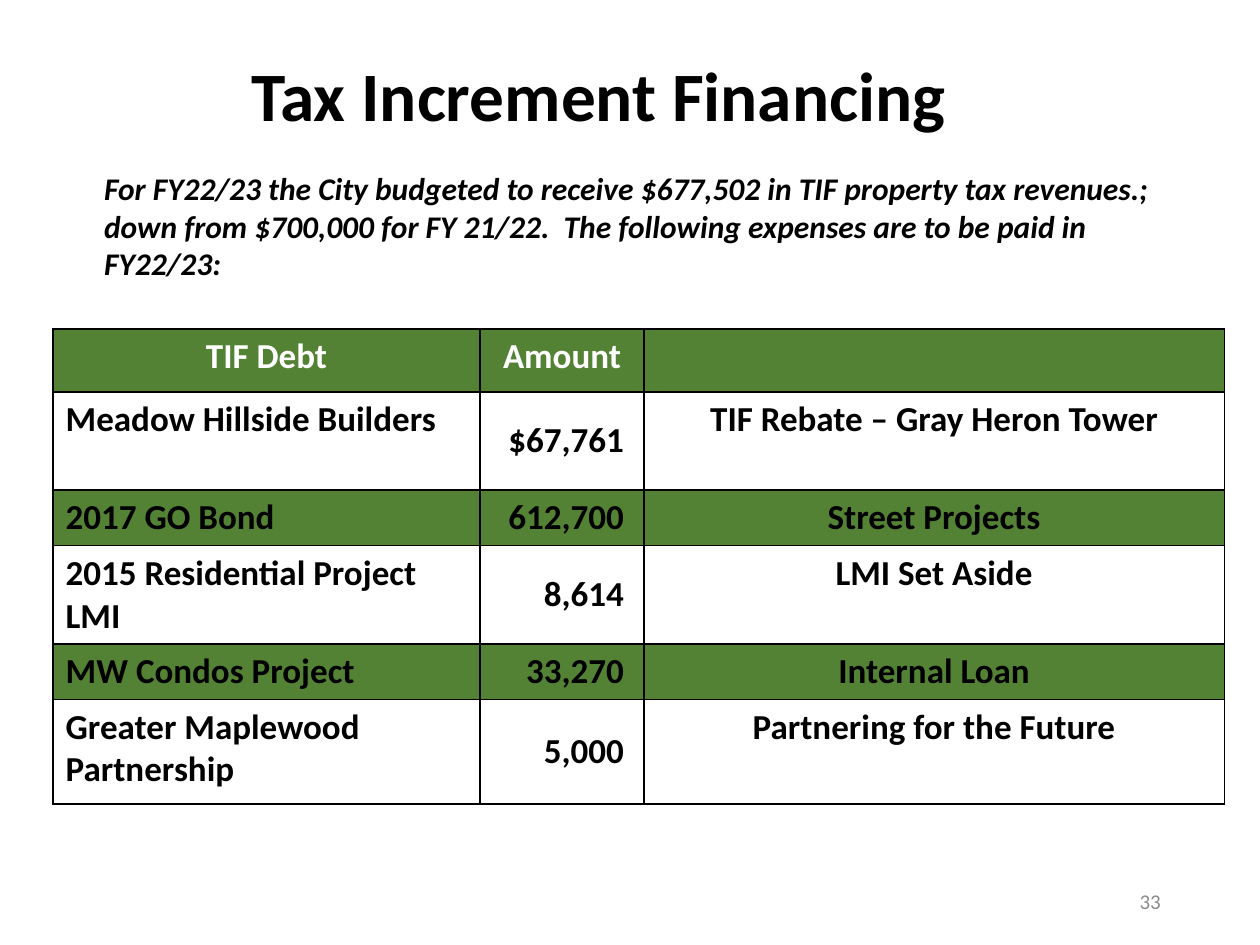
from dataclasses import dataclass

from lxml import etree
from pptx import Presentation
from pptx import util as u
from pptx.dml.color import RGBColor
from pptx.enum import text
from pptx.oxml import ns

HUES = {"ink": "000000", "paper": "FFFFFF", "green": "548235", "gray": "8C8C8C"}
FONT = "Calibri"
LEFT, MID, RIGHT = text.PP_ALIGN.LEFT, text.PP_ALIGN.CENTER, text.PP_ALIGN.RIGHT
CENTER = text.MSO_ANCHOR.MIDDLE
TOP = text.MSO_ANCHOR.TOP


@dataclass
class Box:
    left: float
    top: float
    width: float
    height: float

    def place(self) -> tuple:
        return tuple(u.Cm(n) for n in (self.left, self.top, self.width, self.height))


@dataclass
class Style:
    size: float
    hue: str = "ink"
    bold: bool = True
    slant: bool = False
    align: text.PP_ALIGN = LEFT


@dataclass
class Debt:
    name: str
    sum: str
    use: str
    height: float


DEBTS = [
    Debt("Meadow Hillside Builders", "$67,761", "TIF Rebate – Gray Heron Tower", 1.98),
    Debt("2017 GO Bond", "612,700", "Street Projects", 1.12),
    Debt("2015 Residential Project LMI", "8,614", "LMI Set Aside", 1.98),
    Debt("MW Condos Project", "33,270", "Internal Loan", 1.12),
    Debt("Greater Maplewood Partnership", "5,000", "Partnering for the Future", 2.11),
]
HEAD = Debt("TIF Debt", "Amount", "", 1.27)
WIDTHS = [8.61, 3.3, 11.7]


def write(frame, words: str, style: Style) -> None:
    para = frame.paragraphs[0]
    para.alignment = style.align
    run = para.add_run()
    run.text = words
    font = run.font
    font.name, font.size = FONT, u.Pt(style.size)
    font.bold, font.italic = style.bold, style.slant
    font.color.rgb = RGBColor.from_string(HUES[style.hue])


def label(slide, box: Box, words: str, style: Style, anchor=TOP) -> None:
    frame = slide.shapes.add_textbox(*box.place()).text_frame
    frame.word_wrap = True
    frame.vertical_anchor = anchor
    write(frame, words, style)


def edge(cell) -> None:
    """Draw a thin border on all four sides; lines must precede the fill."""
    props = cell._tc.get_or_add_tcPr()
    for spot, side in enumerate(("lnL", "lnR", "lnT", "lnB")):
        line = etree.Element(ns.qn(f"a:{side}"), w=str(u.Pt(1)))
        fill = etree.SubElement(line, ns.qn("a:solidFill"))
        etree.SubElement(fill, ns.qn("a:srgbClr"), val=HUES["ink"])
        props.insert(spot, line)


def draw_cell(cell, words: str, fill: str, style: Style, anchor=TOP) -> None:
    cell.fill.solid()
    cell.fill.fore_color.rgb = RGBColor.from_string(HUES[fill])
    cell.vertical_anchor = anchor
    edge(cell)
    if words:
        write(cell.text_frame, words, style)


def draw_table(slide, box: Box) -> None:
    rows = [HEAD, *DEBTS]
    grid = slide.shapes.add_table(len(rows), len(WIDTHS), *box.place()).table
    for col, width in zip(grid.columns, WIDTHS):
        col.width = u.Cm(width)
    for at, debt in enumerate(rows):
        grid.rows[at].height = u.Cm(debt.height)
        head = at == 0
        fill = "paper" if at % 2 else "green"
        hue = "paper" if head else "ink"
        aligns = (MID, MID, MID) if head else (LEFT, RIGHT, MID)
        for col, words in enumerate((debt.name, debt.sum, debt.use)):
            cell = grid.cell(at, col)
            anchor = CENTER if col == 1 and not head else TOP
            draw_cell(cell, words, fill, Style(20, hue, align=aligns[col]), anchor)
            if aligns[col] == RIGHT:
                cell.margin_right = u.Cm(0.4)


def main() -> None:
    deck = Presentation()
    deck.slide_width, deck.slide_height = u.Cm(25.4), u.Cm(19.05)
    slide = deck.slides.add_slide(deck.slide_layouts[5])

    title = slide.shapes.title
    title.left, title.top, title.width, title.height = Box(1.55, 1.09, 22.28, 1.8).place()
    frame = title.text_frame
    frame.vertical_anchor = CENTER
    frame.margin_right = u.Cm(1.5)
    frame.paragraphs[0].line_spacing = 0.9
    write(frame, "Tax Increment Financing", Style(39.6, align=MID))

    label(slide, Box(17.93, 17.65, 5.72, 1.02), "33",
          Style(12, "gray", bold=False, align=RIGHT), CENTER)
    draw_table(slide, Box(1.07, 6.63, 23.6, 9.5))
    label(slide, Box(1.85, 3.28, 21.79, 2.57),
          "For FY22/23 the City budgeted to receive $677,502 in TIF property tax "
          "revenues.; down from $700,000 for FY 21/22.  The following expenses are "
          "to be paid in FY22/23:", Style(18, slant=True))
    deck.save("out.pptx")


if __name__ == "__main__":
    main()
